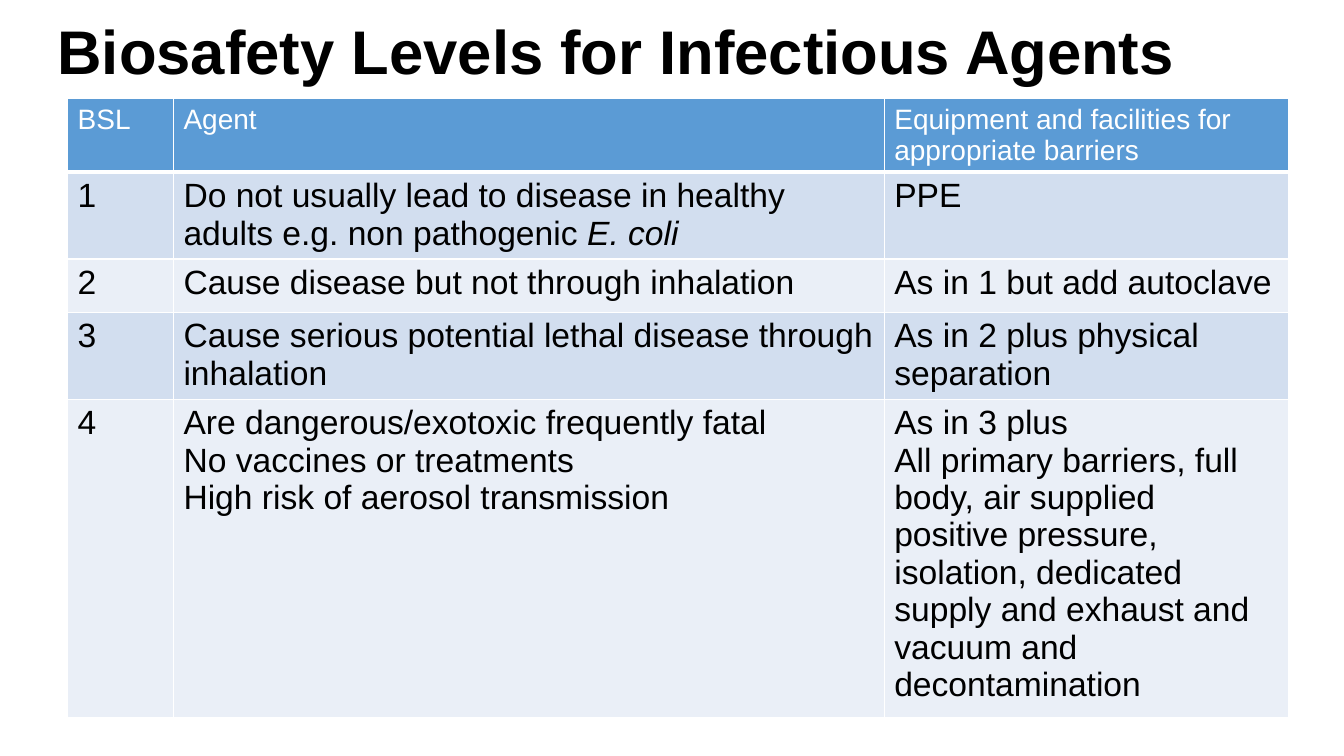
from lxml import etree
from pptx import Presentation
from pptx.dml.color import RGBColor
from pptx.enum.text import MSO_ANCHOR, PP_ALIGN
from pptx.oxml.ns import qn
from pptx.util import Inches, Pt

LEFT = PP_ALIGN.LEFT
MIDDLE = MSO_ANCHOR.MIDDLE
TITLE_ONLY = 5
BLACK, WHITE = "000000", "FFFFFF"
HEADER_FILL = "5B9BD5"
BAND_FILLS = ["EAEFF7", "D2DEEF"]


def add_run(paragraph, text, size, color, bold=False, italic=False):
    run = paragraph.add_run()
    run.text = text
    run.font.name = "Arial"
    run.font.size = Pt(size)
    run.font.bold = bold
    run.font.italic = italic
    run.font.color.rgb = RGBColor.from_string(color)


def add_borders(cell, bottom_width):
    """Draw white lines on all four sides, 1 pt except at the bottom."""
    for side, width in (("L", 1), ("R", 1), ("T", 1), ("B", bottom_width)):
        line = etree.SubElement(cell._tc.get_or_add_tcPr(), qn(f"a:ln{side}"), w=str(Pt(width)))
        fill = etree.SubElement(line, qn("a:solidFill"))
        etree.SubElement(fill, qn("a:srgbClr"), val=WHITE)


prs = Presentation()
prs.slide_width = Inches(13.33)
prs.slide_height = Inches(7.5)
slide = prs.slides.add_slide(prs.slide_layouts[TITLE_ONLY])

title = slide.shapes.title
title.left, title.top = Inches(0.47), Inches(0.1)
title.width, title.height = Inches(12.3), Inches(0.88)
title.text_frame.vertical_anchor = MIDDLE
heading = title.text_frame.paragraphs[0]
heading.alignment = LEFT
heading.line_spacing = 0.9
add_run(heading, "Biosafety Levels for Infectious Agents", 44, BLACK, bold=True)

# Each cell is a list of paragraphs, each paragraph a list of (text, italic) runs
levels = [
    [[[("BSL", False)]],
     [[("Agent", False)]],
     [[("Equipment and facilities for appropriate barriers", False)]]],
    [[[("1", False)]],
     [[("Do not usually lead to disease in healthy adults e.g. non pathogenic ", False),
       ("E. coli", True)]],
     [[("PPE", False)]]],
    [[[("2", False)]],
     [[("Cause disease but not through inhalation", False)]],
     [[("As in 1 but add autoclave", False)]]],
    [[[("3", False)]],
     [[("Cause serious potential lethal disease through inhalation", False)]],
     [[("As in 2 plus physical separation", False)]]],
    [[[("4", False)]],
     [[("Are dangerous/exotoxic frequently fatal", False)],
      [("No vaccines or treatments", False)],
      [("High risk of aerosol transmission", False)]],
     [[("As in 3 plus", False)],
      [("All primary barriers, full body, air supplied positive pressure, isolation, "
        "dedicated supply and exhaust and vacuum and decontamination", False)]]],
]
column_widths = [1.05, 7.05, 4.01]
row_heights = [0.73, 0.86, 0.53, 0.86, 3.16]

table = slide.shapes.add_table(
    len(row_heights), len(column_widths), Inches(0.67), Inches(0.98),
    Inches(sum(column_widths)), Inches(sum(row_heights))).table
for column, width in zip(table.columns, column_widths):
    column.width = Inches(width)
for row, height in zip(table.rows, row_heights):
    row.height = Inches(height)

for row_index, level in enumerate(levels):
    is_header = row_index == 0
    fill_color = HEADER_FILL if is_header else BAND_FILLS[row_index % 2]
    size, color = (20, WHITE) if is_header else (24, BLACK)
    for column_index, paragraphs in enumerate(level):
        cell = table.cell(row_index, column_index)
        add_borders(cell, 3 if is_header else 1)
        cell.fill.solid()
        cell.fill.fore_color.rgb = RGBColor.from_string(fill_color)
        for number, runs in enumerate(paragraphs):
            frame = cell.text_frame
            paragraph = frame.add_paragraph() if number else frame.paragraphs[0]
            for text, italic in runs:
                add_run(paragraph, text, size, color, italic=italic)

prs.save("out.pptx")
